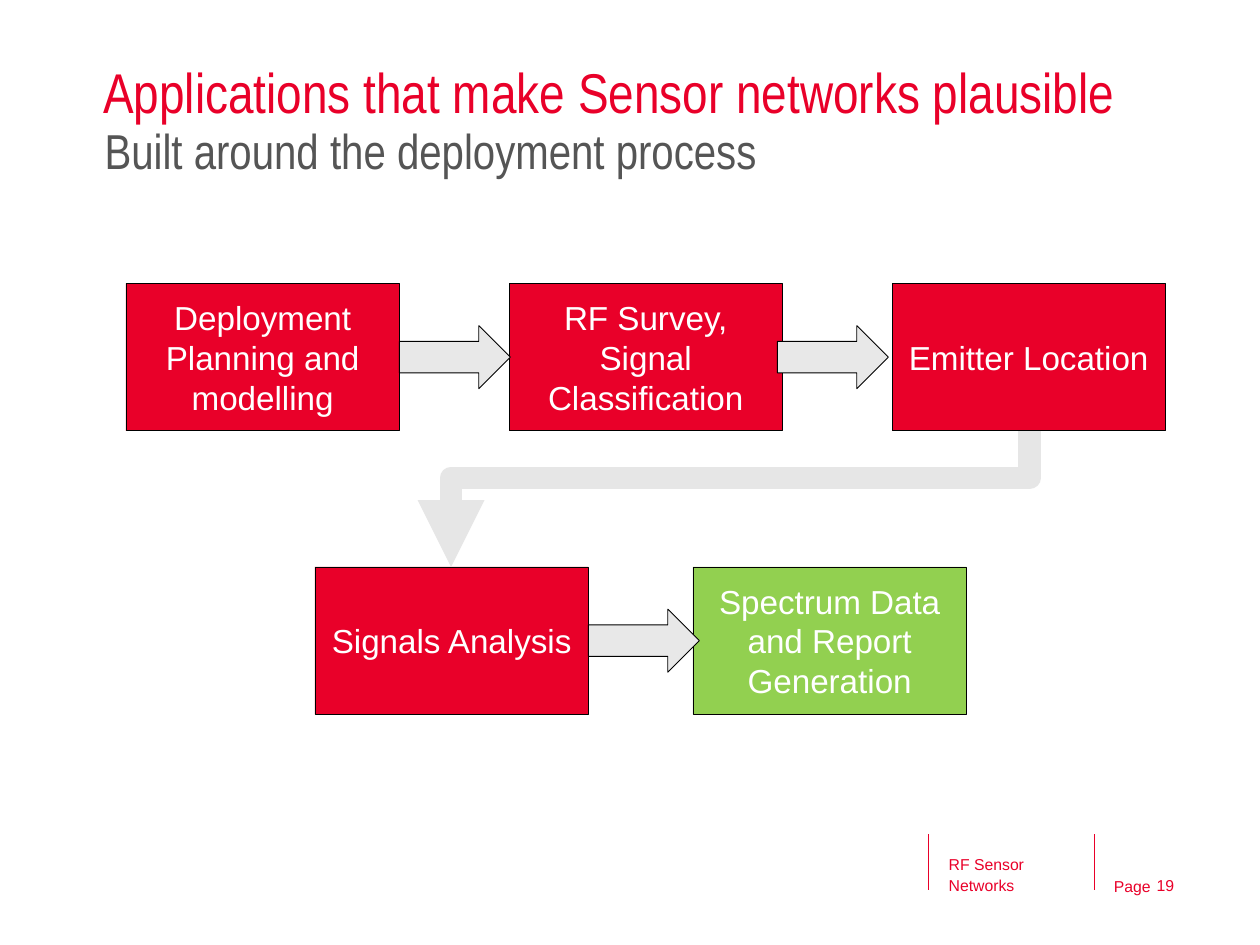
import dataclasses

import pptx
import pptx.dml.color
import pptx.enum.shapes
import pptx.enum.text
import pptx.oxml
import pptx.oxml.ns
import pptx.util
from pptx.util import Inches

SHAPE = pptx.enum.shapes.MSO_SHAPE
CONNECTOR = pptx.enum.shapes.MSO_CONNECTOR
ANCHOR = pptx.enum.text.MSO_ANCHOR
ALIGN = pptx.enum.text.PP_ALIGN


@dataclasses.dataclass(frozen=True)
class Theme:
    """Colours, fonts and type sizes of the deck."""
    red: str = "E90029"
    green: str = "92D050"
    grey: str = "555555"
    arrow: str = "E8E8E8"
    route: str = "E6E6E6"
    black: str = "000000"
    white: str = "FFFFFF"
    heading_font: str = "Arial Narrow"
    body_font: str = "Arial"
    title_size: int = 32
    subtitle_size: int = 28
    step_size: int = 19
    footer_size: int = 9
    hairline: float = 0.5
    route_width: float = 12.75


THEME = Theme()
STEP_WIDTH, STEP_HEIGHT = 2.17, 1.17
ARROW_WIDTH, ARROW_HEIGHT = 0.88, 0.5


def colour(value):
    """Return the colour object for a hex value."""
    return pptx.dml.color.RGBColor.from_string(value)


def write(frame, text, *, size, ink, font=THEME.body_font, align=ALIGN.LEFT,
          anchor=ANCHOR.BOTTOM, spacing=None, wrap=True):
    """Put one formatted paragraph into a text frame."""
    frame.word_wrap = wrap
    frame.vertical_anchor = anchor
    para = frame.paragraphs[0]
    para.alignment = align
    if spacing:
        para.line_spacing = spacing
    span = para.add_run()
    span.text = text
    span.font.name = font
    span.font.size = pptx.util.Pt(size)
    span.font.color.rgb = colour(ink)


def add_label(page, text, left, top, width, height, **style):
    """Add a text box without margins."""
    box = page.shapes.add_textbox(Inches(left), Inches(top), Inches(width), Inches(height))
    frame = box.text_frame
    frame.margin_left = frame.margin_right = frame.margin_top = frame.margin_bottom = 0
    write(frame, text, **style)


def add_block(page, kind, left, top, width, height, fill):
    """Add a filled shape with a thin black outline."""
    block = page.shapes.add_shape(kind, Inches(left), Inches(top), Inches(width), Inches(height))
    block.shadow.inherit = False
    block.fill.solid()
    block.fill.fore_color.rgb = colour(fill)
    block.line.color.rgb = colour(THEME.black)
    block.line.width = pptx.util.Pt(THEME.hairline)
    return block


def add_line(page, kind, start, end, ink, width):
    """Add a connector without a shadow."""
    line = page.shapes.add_connector(kind, *map(Inches, start + end))
    line.line.color.rgb = colour(ink)
    line.line.width = pptx.util.Pt(width)
    line._element.spPr.append(pptx.oxml.parse_xml(
        f"<a:effectLst {pptx.oxml.ns.nsdecls('a')}/>"))
    return line


def add_heading(page, left, top):
    """Place the title and subtitle."""
    add_label(page, "Applications that make Sensor networks plausible", left, top, 8.84, 0.56,
              size=THEME.title_size, ink=THEME.red, font=THEME.heading_font, spacing=0.9)
    add_label(page, "Built around the deployment process", left + 0.01, top + 0.52, 7.92, 0.5,
              size=THEME.subtitle_size, ink=THEME.grey, font=THEME.heading_font,
              anchor=ANCHOR.TOP)


def add_steps(page, left, top, pitch, steps, arrow_starts):
    """Place a row of process steps and the block arrows between them."""
    for index, (text, fill) in enumerate(steps):
        step = add_block(page, SHAPE.RECTANGLE, left + index * pitch, top,
                         STEP_WIDTH, STEP_HEIGHT, fill)
        write(step.text_frame, text, size=THEME.step_size, ink=THEME.white,
              align=ALIGN.CENTER, anchor=ANCHOR.MIDDLE)
    arrow_top = top + (STEP_HEIGHT - ARROW_HEIGHT) / 2
    for start in arrow_starts:
        add_block(page, SHAPE.RIGHT_ARROW, start, arrow_top, ARROW_WIDTH, ARROW_HEIGHT,
                  THEME.arrow)


def add_route(page, start, end, bend):
    """Lead a thick bent arrow down from one row to the next."""
    middle_x, middle_y = (start[0] + end[0]) / 2, (start[1] + end[1]) / 2
    half_drop, half_run = (end[1] - start[1]) / 2, (start[0] - end[0]) / 2
    route = add_line(page, CONNECTOR.ELBOW, (middle_x - half_drop, middle_y - half_run),
                     (middle_x + half_drop, middle_y + half_run),
                     THEME.route, THEME.route_width)
    properties = route._element.spPr
    properties.find(pptx.oxml.ns.qn("a:xfrm")).set("rot", str(90 * 60000))
    guides = properties.find(pptx.oxml.ns.qn("a:prstGeom")).find(pptx.oxml.ns.qn("a:avLst"))
    namespace = pptx.oxml.ns.nsdecls("a")
    guides.append(pptx.oxml.parse_xml(
        f'<a:gd {namespace} name="adj1" fmla="val {round(bend * 100000)}"/>'))
    for tag in ("round", 'tailEnd type="triangle"'):
        route.line._get_or_add_ln().append(pptx.oxml.parse_xml(f"<a:{tag} {namespace}/>"))


def add_footer(page, left, top):
    """Place the footer rules, the deck name and the page number."""
    for rule in (left, left + 1.32):
        add_line(page, CONNECTOR.STRAIGHT, (rule, top), (rule, top + 0.44),
                 THEME.red, THEME.hairline)
    style = dict(size=THEME.footer_size, ink=THEME.red, spacing=1.1)
    add_label(page, "Page", left + 1.47, top + 0.32, 0.34, 0.17, wrap=False, **style)
    add_label(page, "RF Sensor Networks", left + 0.16, top - 0.03, 1.14, 0.51, **style)
    add_label(page, "19", left + 1.81, top + 0.08, 0.3, 0.4, **style)


def main():
    """Build and save the deck."""
    deck = pptx.Presentation()
    deck.slide_width, deck.slide_height = Inches(10), Inches(7.5)
    page = deck.slides.add_slide(deck.slide_layouts[6])
    add_footer(page, 7.37, 6.62)
    add_heading(page, 0.82, 0.44)
    add_steps(page, 1, 2.25, 3.04,
              [("Deployment Planning and modelling", THEME.red),
               ("RF Survey, Signal Classification", THEME.red),
               ("Emitter Location", THEME.red)], [3.17, 6.17])
    add_steps(page, 2.5, 4.5, 3,
              [("Signals Analysis", THEME.red),
               ("Spectrum Data and Report Generation", THEME.green)], [4.67])
    add_route(page, (8.17, 3.42), (3.58, 4.5), 0.345)
    deck.save("out.pptx")


if __name__ == "__main__":
    main()
